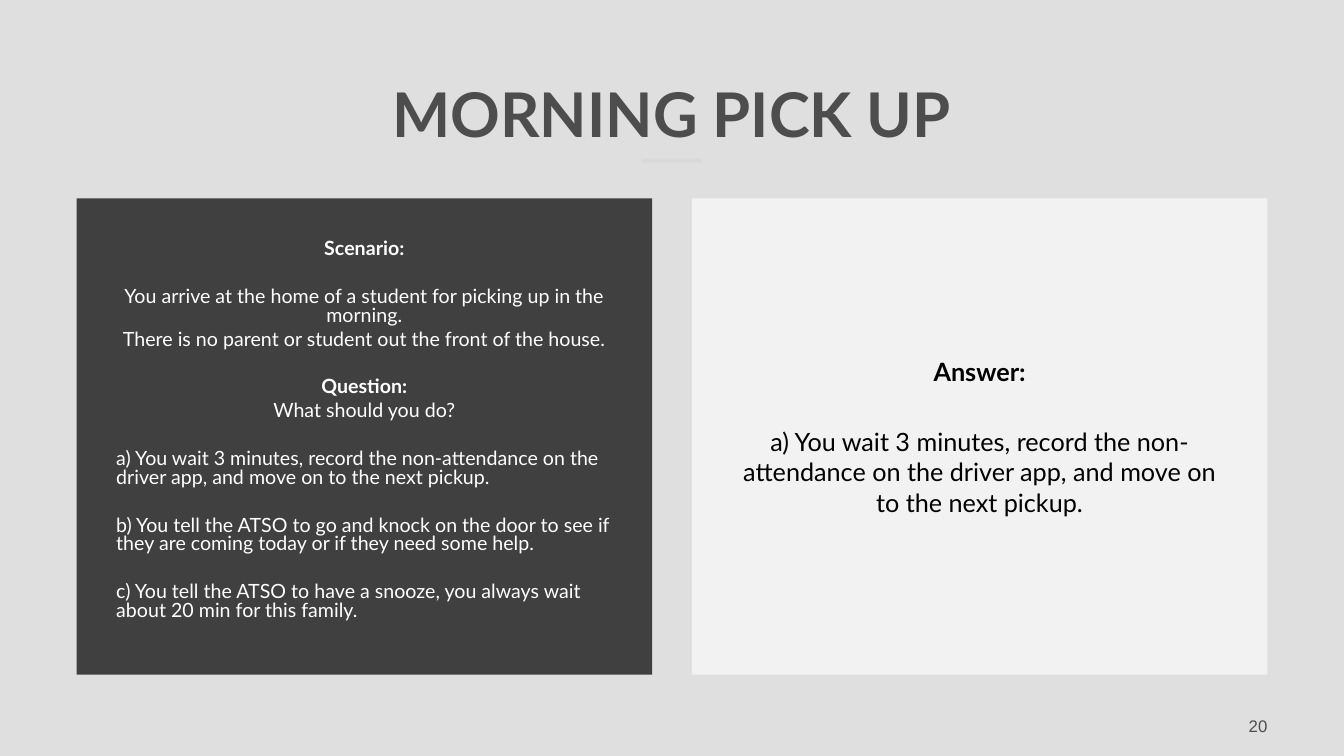
from dataclasses import dataclass

from pptx import Presentation
from pptx import util as u
from pptx.dml.color import RGBColor
from pptx.enum import shapes, text


@dataclass(frozen=True)
class Theme:
    background: str = "DFDFDF"
    rule: str = "D9D9D9"
    heading: str = "4D4D4D"
    dark_panel: str = "404040"
    light_panel: str = "F2F2F2"
    on_dark: str = "FFFFFF"
    on_light: str = "000000"
    font: str = "Lato"
    number_font: str = "Arial"
    title_size: float = 44
    answer_size: float = 18
    scenario_size: float = 14
    number_size: float = 12


THEME = Theme()
SLIDE_WIDTH, SLIDE_HEIGHT = u.Inches(13.33), u.Inches(7.5)
CELL = u.Cm(1)
COLUMNS = 30
MARGIN = (SLIDE_WIDTH - COLUMNS * CELL) // 2
PANEL_COLUMNS, PANEL_ROWS, GUTTER = 14.5, 12, 1
PARA_GAP = 3.6
LINE_HEIGHT = 1.2
CENTER, LEFT, RIGHT = (text.PP_ALIGN.CENTER, text.PP_ALIGN.LEFT,
                       text.PP_ALIGN.RIGHT)

# Each line: wording, bold, alignment, whether a blank line's space precedes it
SCENARIO = [
    ("Scenario:", True, CENTER, False),
    ("You arrive at the home of a student for picking up in the morning.",
     False, CENTER, True),
    ("There is no parent or student out the front of the house.",
     False, CENTER, False),
    ("Question:", True, CENTER, True),
    ("What should you do?", False, CENTER, False),
    ("a) You wait 3 minutes, record the non-attendance on the driver app, "
     "and move on to the next pickup.", False, LEFT, True),
    ("b) You tell the ATSO to go and knock on the door to see if they are "
     "coming today or if they need some help.", False, LEFT, True),
    ("c) You tell the ATSO to have a snooze, you always wait about 20 min "
     "for this family.", False, LEFT, True),
]
ANSWER = [
    ("Answer:", True, CENTER, False),
    ("a) You wait 3 minutes, record the non-attendance on the driver app, "
     "and move on to the next pickup.", False, CENTER, True),
]


def apply_format(target, values):
    for name, value in values.items():
        setattr(target, name, value)


def grid_box(column, row, columns, rows):
    """Turn grid cells into left, top, width and height."""
    return (int(MARGIN + column * CELL), int(row * CELL),
            int(columns * CELL), int(rows * CELL))


def add_rectangle(page, place, color):
    box = page.shapes.add_shape(shapes.MSO_SHAPE.RECTANGLE, *grid_box(*place))
    box.shadow.inherit = False
    box.fill.solid()
    box.fill.fore_color.rgb = RGBColor.from_string(color)
    box.line.fill.background()
    return box


def write_span(para, wording, size, color, bold=False, font=THEME.font):
    span = para.add_run()
    span.text = wording
    apply_format(span.font, {"name": font, "size": u.Pt(size), "bold": bold})
    span.font.color.rgb = RGBColor.from_string(color)


def add_label(page, place, wording, frame_format, para_format, **span_format):
    box = page.shapes.add_textbox(*grid_box(*place))
    apply_format(box.text_frame, {"word_wrap": True, **frame_format})
    para = box.text_frame.paragraphs[0]
    apply_format(para, para_format)
    write_span(para, wording, **span_format)


def add_panel(page, column, fill, lines, size, color, spacing=1.0,
              bottom_inset=1.0):
    box = add_rectangle(page, (column, 5, PANEL_COLUMNS, PANEL_ROWS), fill)
    frame = box.text_frame
    apply_format(frame, {
        "word_wrap": True,
        "vertical_anchor": text.MSO_ANCHOR.MIDDLE,
        "margin_left": CELL,
        "margin_right": CELL,
        "margin_top": CELL,
        "margin_bottom": int(bottom_inset * CELL),
    })
    blank_line = size * LINE_HEIGHT * spacing + PARA_GAP
    for index, (wording, bold, alignment, spaced) in enumerate(lines):
        para = frame.add_paragraph() if index else frame.paragraphs[0]
        apply_format(para, {
            "alignment": alignment,
            "line_spacing": spacing,
            "space_before": u.Pt(PARA_GAP + blank_line * spaced),
        })
        write_span(para, wording, size, color, bold)


def main():
    deck = Presentation()
    apply_format(deck, {"slide_width": SLIDE_WIDTH,
                        "slide_height": SLIDE_HEIGHT})
    page = deck.slides.add_slide(deck.slide_layouts[6])
    page.background.fill.solid()
    page.background.fill.fore_color.rgb = RGBColor.from_string(
        THEME.background)

    add_rectangle(page, (14.25, 4, 1.5, 0.1), THEME.rule)
    add_label(page, (0, 0.9, COLUMNS, 3), "MORNING PICK UP",
              {"vertical_anchor": text.MSO_ANCHOR.BOTTOM},
              {"alignment": CENTER, "line_spacing": u.Pt(48.8)},
              size=THEME.title_size, color=THEME.heading, bold=True)
    add_label(page, (27, 17.8, 3, 1), "20",
              {"vertical_anchor": text.MSO_ANCHOR.MIDDLE, "margin_right": 0},
              {"alignment": RIGHT},
              size=THEME.number_size, color=THEME.heading,
              font=THEME.number_font)
    add_panel(page, 0, THEME.dark_panel, SCENARIO, THEME.scenario_size,
              THEME.on_dark, spacing=0.8, bottom_inset=1.28)
    add_panel(page, PANEL_COLUMNS + GUTTER, THEME.light_panel, ANSWER,
              THEME.answer_size, THEME.on_light)
    deck.save("out.pptx")


if __name__ == "__main__":
    main()
